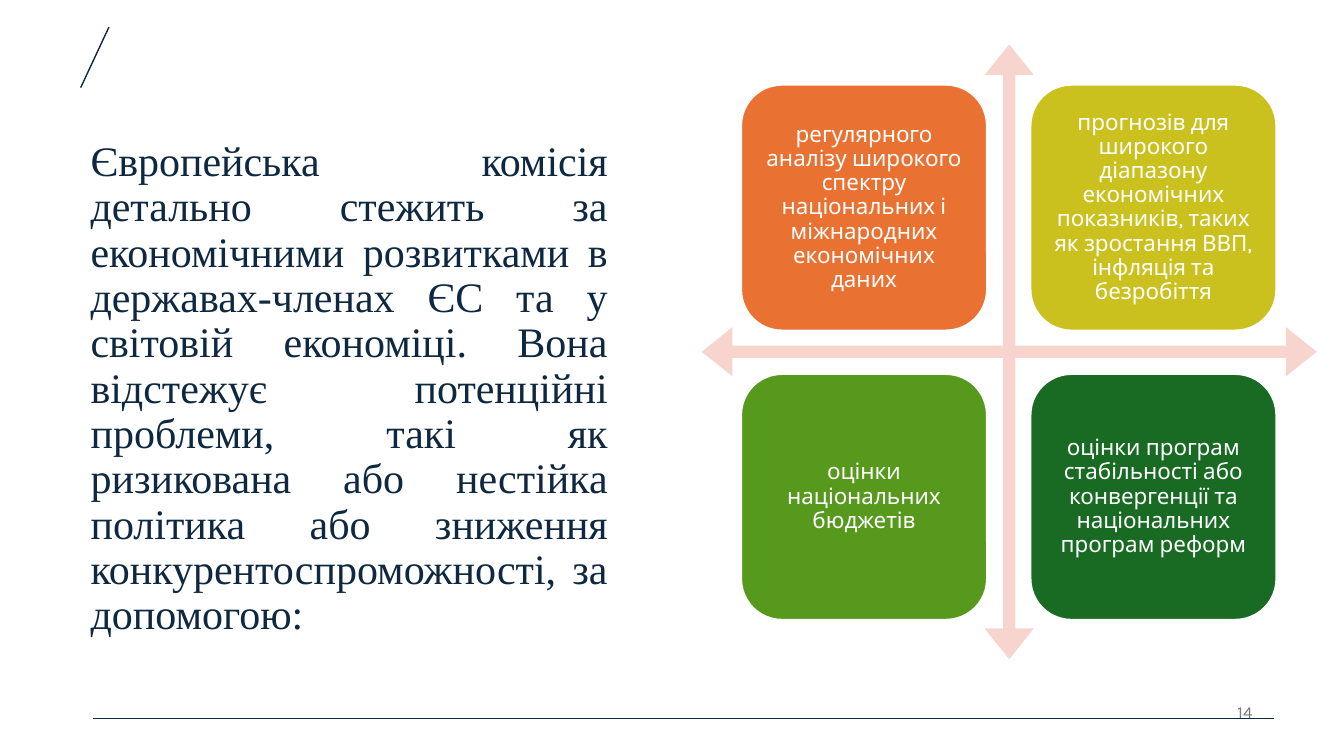
from dataclasses import dataclass

from pptx import Presentation
from pptx.dml.color import RGBColor
from pptx.enum.shapes import MSO_CONNECTOR, MSO_SHAPE
from pptx.enum.text import MSO_ANCHOR as ANCHOR, PP_ALIGN as ALIGN
from pptx.oxml.ns import qn
from pptx.util import Inches, Pt


@dataclass(frozen=True)
class Theme:
    navy: str = "0E2841"
    white: str = "FFFFFF"
    arrows: str = "F7D5CE"
    grey: str = "797979"
    cards: tuple = ("E97132", "CBC11E", "56991D", "196B24")
    title_font: str = "Times New Roman"
    body_font: str = "Karla"
    title_size: int = 30
    card_size: int = 16
    number_size: int = 12


TITLE = (
    "Європейська комісія детально стежить за економічними розвитками в "
    "державах-членах ЄС та у світовій економіці. Вона відстежує потенційні "
    "проблеми, такі як ризикована або нестійка політика або зниження "
    "конкурентоспроможності, за допомогою:"
)
CARDS = (
    "регулярного аналізу широкого спектру національних і міжнародних "
    "економічних даних",
    "прогнозів для широкого діапазону економічних показників, таких як "
    "зростання ВВП, інфляція та безробіття",
    "оцінки національних бюджетів",
    "оцінки програм стабільності або конвергенції та національних програм реформ",
)
CARD_LEFT, CARD_TOP, CARD_SIZE, CARD_STEP = 7.35, 0.84, 2.44, 2.87


def rgb(value):
    return RGBColor.from_string(value)


def set_all(obj, values):
    for name, value in values.items():
        setattr(obj, name, value)


class SlideBuilder:
    def __init__(self, slide, theme):
        self.slide = slide
        self.theme = theme

    def fill_text(self, sp, text, font, size, color, align, spacing=1.0, **frame):
        """Fill a shape with one paragraph; frame holds text frame settings."""
        tf = sp.text_frame
        set_all(tf, {"word_wrap": True, "vertical_anchor": ANCHOR.MIDDLE, **frame})
        p = tf.paragraphs[0]
        set_all(p, {"alignment": align, "line_spacing": spacing})
        r = p.add_run()
        r.text = text
        set_all(r.font, {"name": font, "size": Pt(size)})
        r.font.color.rgb = rgb(color)

    def text(self, box, *args, **kwargs):
        sp = self.slide.shapes.add_textbox(*map(Inches, box))
        self.fill_text(sp, *args, **kwargs)

    def shape(self, kind, box, fill, outline=None):
        sp = self.slide.shapes.add_shape(kind, *map(Inches, box))
        sp.shadow.inherit = False
        sp.fill.solid()
        sp.fill.fore_color.rgb = rgb(fill)
        if outline:
            sp.line.color.rgb = rgb(outline)
            sp.line.width = Pt(1.5)
        else:
            sp.line.fill.background()
        return sp

    def line(self, *ends):
        ln = self.slide.shapes.add_connector(
            MSO_CONNECTOR.STRAIGHT, *map(Inches, ends))
        ln.line.color.rgb = rgb(self.theme.navy)
        ln.line.width = Pt(1)
        sp_pr = ln._element.spPr
        sp_pr.append(sp_pr.makeelement(qn("a:effectLst"), {}))

    def cross_arrow(self, box):
        sp = self.shape(MSO_SHAPE.QUAD_ARROW, box, self.theme.arrows)
        for i, value in enumerate((0.02, 0.04, 0.05)):
            sp.adjustments[i] = value

    def card(self, box, text, fill):
        t = self.theme
        sp = self.shape(MSO_SHAPE.ROUNDED_RECTANGLE, box, fill, t.white)
        sides = ("left", "top", "right", "bottom")
        margins = {f"margin_{side}": Inches(0.07) for side in sides}
        self.fill_text(sp, text, t.body_font, t.card_size, t.white, ALIGN.CENTER,
                       0.9, **margins)


def main():
    prs = Presentation()
    set_all(prs, {"slide_width": Inches(13.33), "slide_height": Inches(7.5)})
    theme = Theme()
    s = SlideBuilder(prs.slides.add_slide(prs.slide_layouts[6]), theme)

    s.text((0.8, 1.28, 5.33, 5.62), TITLE, theme.title_font, theme.title_size,
           theme.navy, ALIGN.JUSTIFY, 0.9, margin_bottom=Inches(0.5))
    s.line(1.08, 0.27, 0.8, 0.87)
    s.line(12.64, 7.13, 0.92, 7.13)

    s.cross_arrow((6.96, 0.44, 6.1, 6.1))
    for i, (text, fill) in enumerate(zip(CARDS, theme.cards)):
        row, col = divmod(i, 2)
        s.card((CARD_LEFT + col * CARD_STEP, CARD_TOP + row * CARD_STEP,
                CARD_SIZE, CARD_SIZE), text, fill)

    s.text((9.52, 6.86, 3, 0.4), "14", theme.body_font, theme.number_size,
           theme.grey, ALIGN.RIGHT)
    prs.save("out.pptx")


if __name__ == "__main__":
    main()
